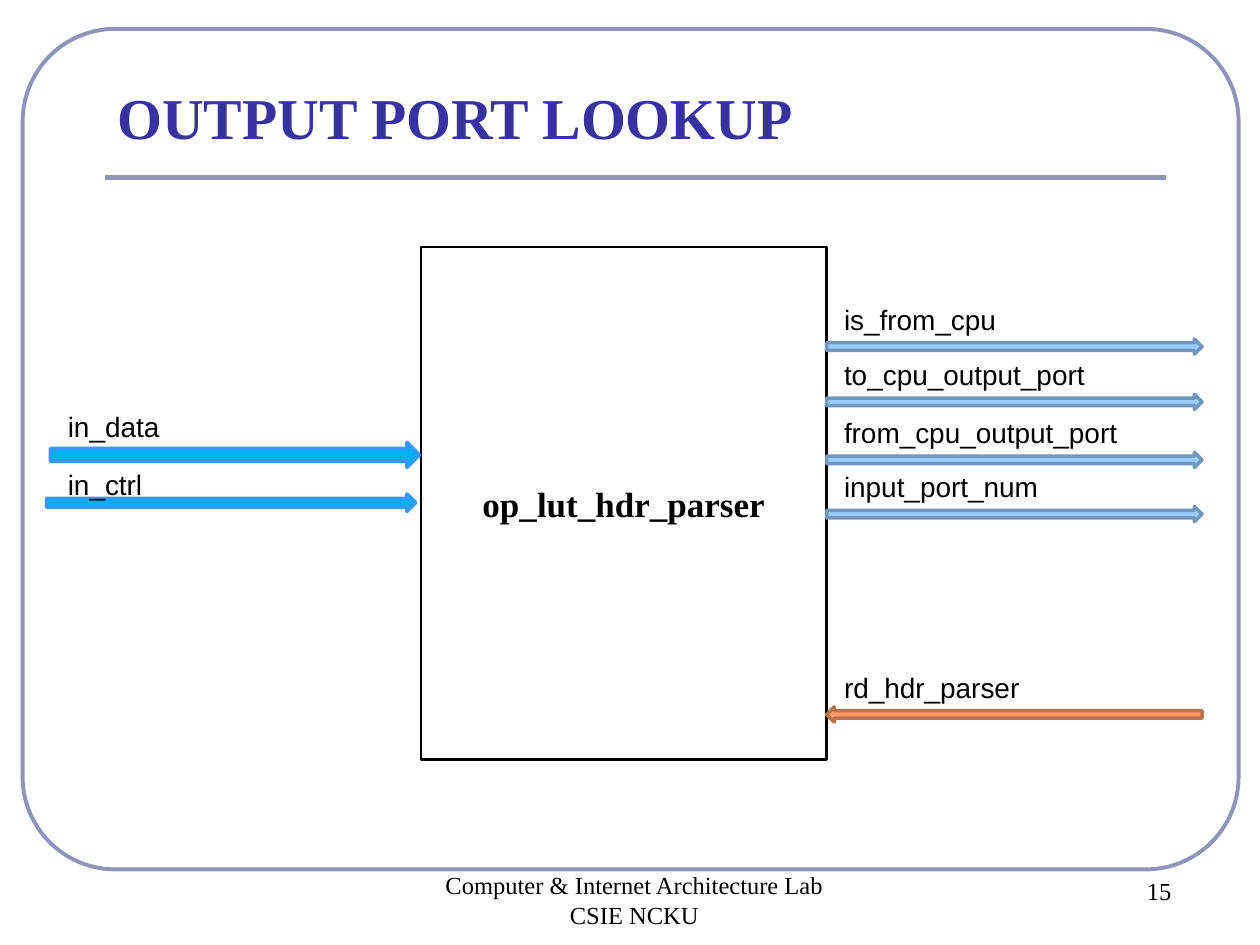
from dataclasses import dataclass

from lxml.etree import SubElement
from pptx import Presentation
from pptx.dml.color import RGBColor
from pptx.enum.shapes import MSO_CONNECTOR, MSO_SHAPE
from pptx.enum.text import MSO_ANCHOR, MSO_AUTO_SIZE, PP_ALIGN
from pptx.oxml.ns import qn
from pptx.util import Inches, Pt


@dataclass(frozen=True)
class Theme:
    serif: str = "Times New Roman"
    sans: str = "Arial"
    title: str = "3732A0"
    frame: str = "9094B8"
    ink: str = "000000"
    paper: str = "FFFFFF"
    data: tuple = ("00B0F0", "3399FF")
    result: tuple = ("99CCFF", "7197BD")
    read: tuple = ("FF9966", "BD714B")
    title_size: int = 33
    block_size: int = 20
    label_size: int = 16
    footer_size: int = 14


THEME = Theme()
WIDTH, HEIGHT = 10, 7.5
MARGIN, CONTENT_WIDTH = 0.83, 8.42
BLOCK = (3.34, 1.96, 3.22, 4.07)
BLOCK_RIGHT = BLOCK[0] + BLOCK[2]
LABEL_HEIGHT = 0.37

# label, arrow top, label top, arrow left, arrow height
INPUTS = [
    ("in_data", 3.51, 3.2, 0.4, 0.2),
    ("in_ctrl", 3.92, 3.66, 0.37, 0.14),
]
# label, arrow top, colours, rotation
RIGHT_PORTS = [
    ("is_from_cpu", 2.69, THEME.result, 0),
    ("to_cpu_output_port", 3.13, THEME.result, 0),
    ("from_cpu_output_port", 3.59, THEME.result, 0),
    ("input_port_num", 4.02, THEME.result, 0),
    ("rd_hdr_parser", 5.61, THEME.read, 180),
]


def box(left, top, width, height):
    return [Inches(v) for v in (left, top, width, height)]


def rgb(value):
    return RGBColor.from_string(value)


def write(tf, lines, font, size, color=THEME.ink, bold=False, align=PP_ALIGN.LEFT):
    tf.word_wrap = True
    tf.text = "\n".join(lines)
    for p in tf.paragraphs:
        p.alignment = align
        p.font.name = font
        p.font.size = Pt(size)
        p.font.bold = bold
        p.font.color.rgb = rgb(color)


def add_outlined(slide, kind, area, fill, line, weight):
    sp = slide.shapes.add_shape(kind, *box(*area))
    sp.shadow.inherit = False
    if fill:
        sp.fill.solid()
        sp.fill.fore_color.rgb = rgb(fill)
    else:
        sp.fill.background()
    sp.line.color.rgb = rgb(line)
    sp.line.width = Pt(weight)
    return sp


def add_frame(slide):
    frame = add_outlined(slide, MSO_SHAPE.ROUNDED_RECTANGLE,
                         (0.18, 0.23, 9.65, 6.67), None, THEME.frame, 2.25)
    frame.adjustments[0] = 0.11
    rule = slide.shapes.add_connector(
        MSO_CONNECTOR.STRAIGHT, *box(MARGIN, 1.41, MARGIN + CONTENT_WIDTH, 1.41))
    rule.line.color.rgb = rgb(THEME.frame)
    rule.line.width = Pt(3)
    SubElement(rule._element.spPr, qn("a:effectLst"))


def set_title(slide, text):
    title = slide.shapes.title
    title.left, title.top, title.width, title.height = box(
        MARGIN, 0.6, CONTENT_WIDTH, 0.65)
    tf = title.text_frame
    write(tf, [text], THEME.serif, THEME.title_size, THEME.title, bold=True)
    tf.auto_size = MSO_AUTO_SIZE.NONE
    tf.vertical_anchor = MSO_ANCHOR.BOTTOM


def add_footer(slide, area, lines):
    tf = slide.shapes.add_textbox(*box(*area)).text_frame
    write(tf, lines, THEME.serif, THEME.footer_size, align=PP_ALIGN.CENTER)


def add_block(slide, name):
    sp = add_outlined(slide, MSO_SHAPE.RECTANGLE, BLOCK, THEME.paper, THEME.ink, 1.5)
    tf = sp.text_frame
    tf.margin_left = tf.margin_right = tf.margin_top = tf.margin_bottom = 0
    tf.vertical_anchor = MSO_ANCHOR.MIDDLE
    write(tf, [name], THEME.serif, THEME.block_size, bold=True, align=PP_ALIGN.CENTER)


def add_signal(slide, name, arrow, label, colors, rotation=0):
    """Draw a block arrow and its label; label is (left, top, width)."""
    sp = add_outlined(slide, MSO_SHAPE.RIGHT_ARROW, arrow, *colors, 2)
    sp.rotation = rotation
    tf = slide.shapes.add_textbox(*box(*label, LABEL_HEIGHT)).text_frame
    write(tf, [name], THEME.sans, THEME.label_size)
    tf.auto_size = MSO_AUTO_SIZE.SHAPE_TO_FIT_TEXT


def main():
    prs = Presentation()
    prs.slide_width, prs.slide_height = Inches(WIDTH), Inches(HEIGHT)
    slide = prs.slides.add_slide(prs.slide_layouts[5])
    add_frame(slide)
    set_title(slide, "OUTPUT PORT LOOKUP")
    add_footer(slide, (2.87, 6.86, 4.33, 0.5),
               ["Computer & Internet Architecture Lab", "CSIE NCKU"])
    add_footer(slide, (8.66, 6.9, 1.08, 0.5), ["15"])
    add_block(slide, "op_lut_hdr_parser")
    for name, top, label_top, left, height in INPUTS:
        add_signal(slide, name, (left, top, 2.93, height),
                   (0.44, label_top, 1.54), THEME.data)
    for name, top, colors, rotation in RIGHT_PORTS:
        add_signal(slide, name, (BLOCK_RIGHT, top, 2.98, 0.12),
                   (BLOCK_RIGHT + 0.04, top - 0.34, 2.82), colors, rotation)
    prs.save("out.pptx")


if __name__ == "__main__":
    main()
